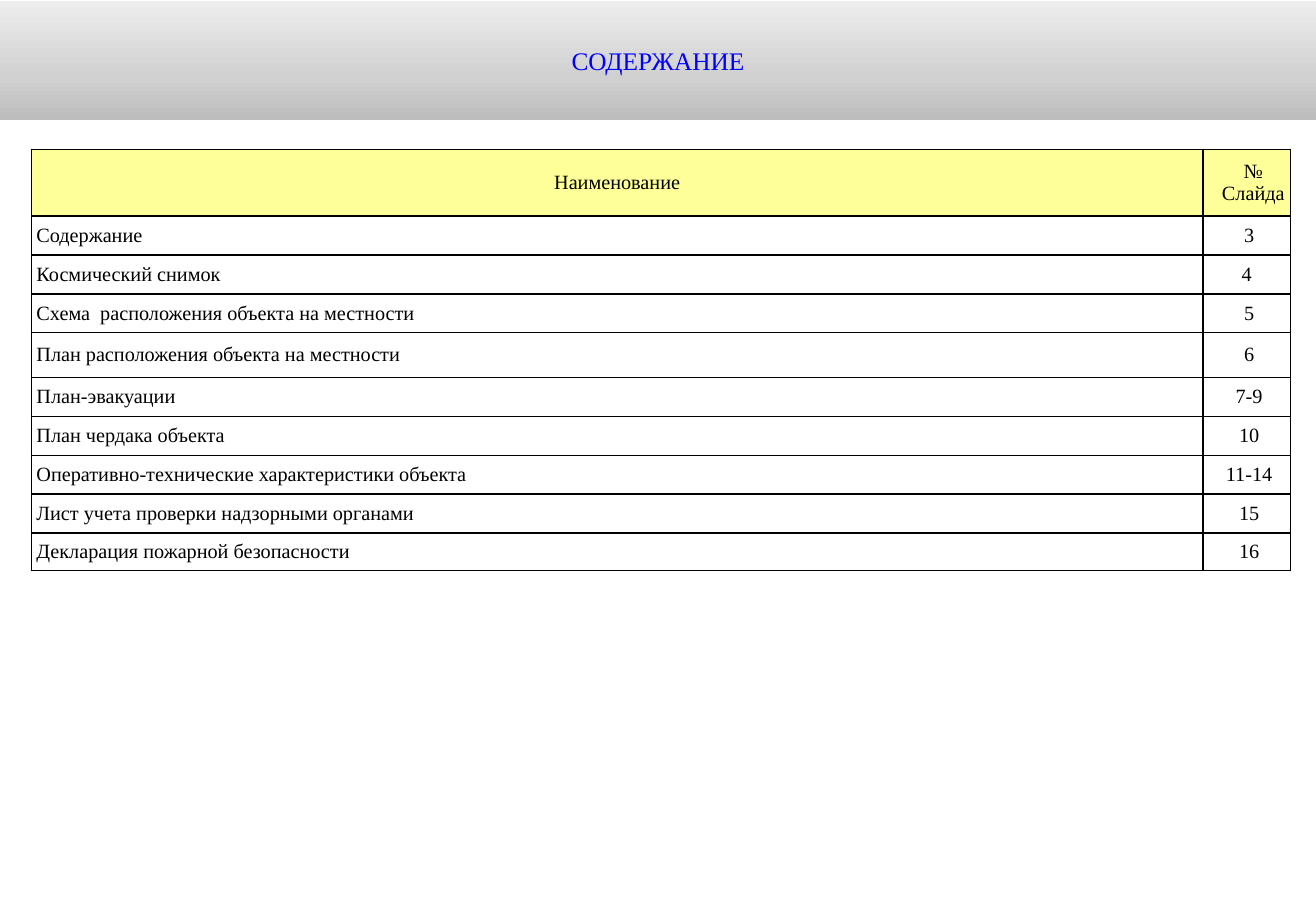
from lxml import etree
from pptx import Presentation
from pptx.dml.color import RGBColor
from pptx.enum.text import MSO_ANCHOR, PP_ALIGN
from pptx.oxml import parse_xml
from pptx.oxml.ns import qn
from pptx.util import Inches, Pt

MID = MSO_ANCHOR.MIDDLE
LEFT, MIDDLE = PP_ALIGN.LEFT, PP_ALIGN.CENTER
NS = "http://schemas.openxmlformats.org/drawingml/2006/main"
FONT = "Times New Roman"

TITLE = "СОДЕРЖАНИЕ"
STOPS = [(0, "BCBCBC"), (35, "D0D0D0"), (100, "EDEDED")]
HEAD = ("Наименование", "№\nСлайда")
ROWS = [
    ("Содержание", "3"),
    ("Космический снимок", "4"),
    ("Схема  расположения объекта на местности", "5"),
    ("План расположения объекта на местности", "6"),
    ("План-эвакуации", "7-9"),
    ("План чердака объекта", "10"),
    ("Оперативно-технические характеристики объекта", "11-14"),
    ("Лист учета проверки надзорными органами", "15"),
    ("Декларация пожарной безопасности", "16"),
]
WIDTHS = [9.64, 0.72]
HEIGHTS = [0.55, 0.32, 0.32, 0.32, 0.37, 0.32, 0.32, 0.32, 0.32, 0.31]


def color(text):
    return RGBColor.from_string(text)


def style(frame, size, tint, align, indent=0):
    for para in frame.paragraphs:
        para.alignment = align
        props = para._p.get_or_add_pPr()
        props.set("marL", str(Inches(indent)))
        props.set("indent", "0")
        for run in para.runs:
            run.font.name = FONT
            run.font.size = Pt(size)
            run.font.bold = False
            run.font.color.rgb = color(tint)


def shade(shape, stops):
    fill = parse_xml(f'<a:gradFill xmlns:a="{NS}" rotWithShape="1"><a:gsLst/>'
                     '<a:lin ang="16200000" scaled="0"/></a:gradFill>')
    for pos, tint in stops:
        stop = etree.SubElement(fill[0], qn("a:gs"), pos=str(pos * 1000))
        etree.SubElement(stop, qn("a:srgbClr"), val=tint)
    shape._element.spPr.append(fill)


def border(cell):
    props = cell._tc.get_or_add_tcPr()
    for spot, side in enumerate("LRTB"):
        line = parse_xml(f'<a:ln{side} xmlns:a="{NS}" w="{Pt(1)}"><a:solidFill>'
                         f'<a:srgbClr val="000000"/></a:solidFill></a:ln{side}>')
        props.insert(spot, line)


def layout(row, col):
    if row == 0:
        return MIDDLE, 0.11 * col
    if col == 0:
        return LEFT, 0.04
    return MIDDLE, 0 if ROWS[row - 1][1] == "4" else 0.04


def main():
    deck = Presentation()
    deck.slide_width, deck.slide_height = Inches(10.83), Inches(7.5)
    slide = deck.slides.add_slide(deck.slide_layouts[5])

    title = slide.shapes.title
    title.left, title.top = Inches(0), Inches(0.01)
    title.width, title.height = Inches(10.83), Inches(0.98)
    shade(title, STOPS)
    frame = title.text_frame
    frame.text = TITLE
    frame.vertical_anchor = MID
    style(frame, 15, "0000FF", MIDDLE)

    data = [HEAD] + ROWS
    table = slide.shapes.add_table(
        len(data), len(WIDTHS), Inches(0.26), Inches(1.23),
        Inches(sum(WIDTHS)), Inches(sum(HEIGHTS))).table
    for col, width in enumerate(WIDTHS):
        table.columns[col].width = Inches(width)
    for row, texts in enumerate(data):
        table.rows[row].height = Inches(HEIGHTS[row])
        for col, text in enumerate(texts):
            cell = table.cell(row, col)
            cell.text_frame.text = text
            cell.vertical_anchor = MID
            cell.margin_left = cell.margin_right = 0
            cell.margin_top = cell.margin_bottom = 0
            if row == 0:
                cell.fill.solid()
                cell.fill.fore_color.rgb = color("FFFF99")
            else:
                cell.fill.background()
            border(cell)
            style(cell.text_frame, 12, "000000", *layout(row, col))

    deck.save("out.pptx")


if __name__ == "__main__":
    main()
